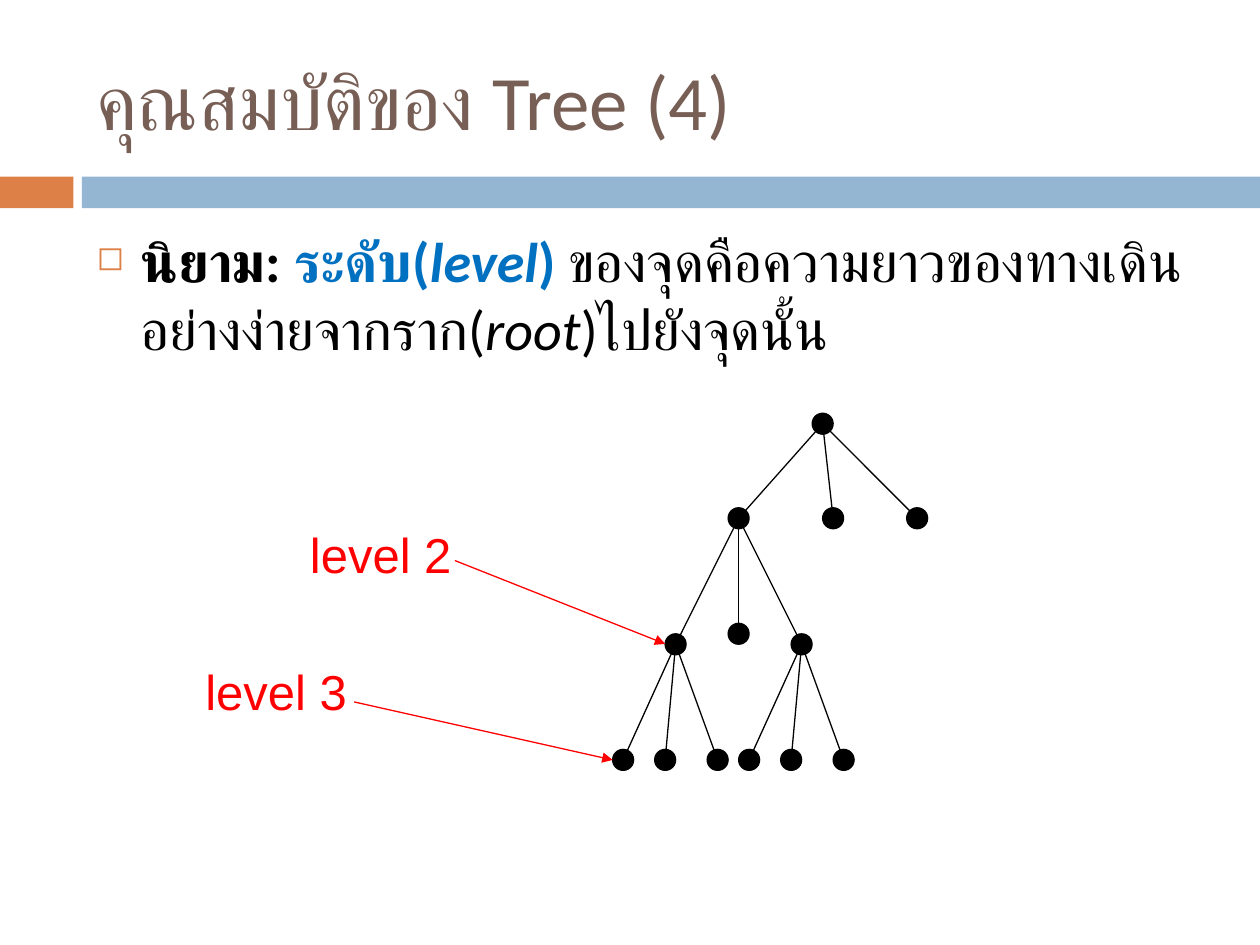
from lxml import etree
from pptx import Presentation
from pptx.dml.color import RGBColor
from pptx.enum import shapes, text
from pptx.oxml.ns import qn
from pptx.util import Cm, Pt

BLACK = RGBColor(0, 0, 0)
BROWN = RGBColor(0x77, 0x5F, 0x55)
ORANGE = RGBColor(0xDD, 0x80, 0x47)
SKY = RGBColor(0x94, 0xB6, 0xD2)
BLUE = RGBColor(0, 0x70, 0xC0)
RED = RGBColor(0xFF, 0, 0)

COLUMNS, ROWS = 30, 34
TREE = ((20, 1), [
    ((12, 10), [
        ((6, 22), [((1, 33), []), ((5, 33), []), ((10, 33), [])]),
        ((12, 21), []),
        ((18, 22), [((13, 33), []), ((17, 33), []), ((22, 33), [])]),
    ]),
    ((21, 10), []),
    ((29, 10), []),
])

DEFINITION = [
    ("นิยาม: ", BLACK, True, False),
    ("ระดับ(", BLUE, True, False),
    ("level", BLUE, True, True),
    (") ", BLUE, True, False),
    ("ของจุดคือความยาวของทางเดินอย่างง่ายจากราก(", BLACK, False, False),
    ("root", BLACK, False, True),
    (")ไปยังจุดนั้น", BLACK, False, False),
]


def style(run, size, face, color, bold=False, italic=False):
    run.font.size = Pt(size)
    run.font.name = face
    run.font.color.rgb = color
    run.font.bold = bold
    run.font.italic = italic


def add_solid(slide, kind, left, top, width, height, color):
    solid = slide.shapes.add_shape(kind, left, top, width, height)
    solid.shadow.inherit = False
    solid.fill.solid()
    solid.fill.fore_color.rgb = color
    solid.line.fill.background()
    return solid


def add_line(slide, start, end, color, arrow=False):
    line = slide.shapes.add_connector(shapes.MSO_CONNECTOR.STRAIGHT, *start, *end)
    line.line.color.rgb = color
    line.line.width = Pt(0.75)
    properties = line._element.spPr
    if arrow:
        etree.SubElement(properties.find(qn("a:ln")), qn("a:tailEnd"), type="triangle")
    etree.SubElement(properties, qn("a:effectLst"))


def add_frame(slide, left, top, width, height):
    frame = slide.shapes.add_textbox(left, top, width, height).text_frame
    frame.word_wrap = True
    return frame


def add_band(slide, left, top, width, height):
    accent, gap = Cm(1.48), Cm(0.17)
    start = accent + gap
    rectangle = shapes.MSO_SHAPE.RECTANGLE
    add_solid(slide, rectangle, left, top, accent, height, ORANGE)
    add_solid(slide, rectangle, left + start, top, width - start, height, SKY)


def add_title(slide, left, top, width, height):
    frame = add_frame(slide, left, top, width, height)
    frame.vertical_anchor = text.MSO_ANCHOR.MIDDLE
    frame.text = "คุณสมบัติของ Tree (4)"
    style(frame.paragraphs[0].runs[0], 44, "Calibri", BROWN)


def add_definition(slide, left, top, width, height):
    paragraph = add_frame(slide, left, top, width, height).paragraphs[0]
    paragraph.space_before = Pt(7)
    for words, color, bold, italic in DEFINITION:
        run = paragraph.add_run()
        run.text = words
        style(run, 32, "Calibri", color, bold, italic)
    properties = paragraph._p.get_or_add_pPr()
    indent = Cm(0.89)
    properties.set("marL", str(indent))
    properties.set("indent", str(-indent))
    bullet_color = etree.SubElement(properties, qn("a:buClr"))
    etree.SubElement(bullet_color, qn("a:srgbClr"), val=str(ORANGE))
    etree.SubElement(properties, qn("a:buSzPct"), val="60000")
    etree.SubElement(properties, qn("a:buChar"), char="◻")


def add_tree(slide, left, top, width, height):
    def place(column, row):
        return left + width * column // COLUMNS, top + height * row // ROWS

    diameter = 2 * width // COLUMNS

    def add_branch(node, children):
        x, y = place(*node)
        for child, grandchildren in children:
            add_line(slide, (x, y), place(*child), BLACK)
            add_branch(child, grandchildren)
        dot = add_solid(slide, shapes.MSO_SHAPE.OVAL, x - diameter // 2,
                        y - diameter // 2, diameter, diameter, BLACK)
        dot.line.color.rgb = BLACK
        dot.line.width = Pt(0.75)

    add_branch(*TREE)


def add_level(slide, left, top, width, height, caption, start, end):
    frame = add_frame(slide, left, top, width, height)
    frame.text = caption
    style(frame.paragraphs[0].runs[0], 28, "Arial", RED)
    corners = [(left + Cm(x), top + Cm(y)) for x, y in (start, end)]
    add_line(slide, *corners, RED, arrow=True)


def main():
    deck = Presentation()
    deck.slide_width, deck.slide_height = Cm(25.4), Cm(19.05)
    slide = deck.slides.add_slide(deck.slide_layouts[6])
    add_band(slide, 0, Cm(3.56), deck.slide_width, Cm(0.64))
    add_title(slide, Cm(1.7), Cm(0.64), Cm(22.66), Cm(2.74))
    add_definition(slide, Cm(1.7), Cm(4.45), Cm(22.66), Cm(12.5))
    add_tree(slide, Cm(12.35), Cm(8.33), Cm(6.35), Cm(7.2))
    add_level(slide, Cm(6), Cm(10.44), Cm(4.65), Cm(1.45),
              "level 2", (3.17, 0.86), (7.41, 2.54))
    add_level(slide, Cm(3.89), Cm(13.21), Cm(3.68), Cm(1.45),
              "level 3", (3.25, 0.94), (8.46, 2.11))
    deck.save("out.pptx")


if __name__ == "__main__":
    main()
